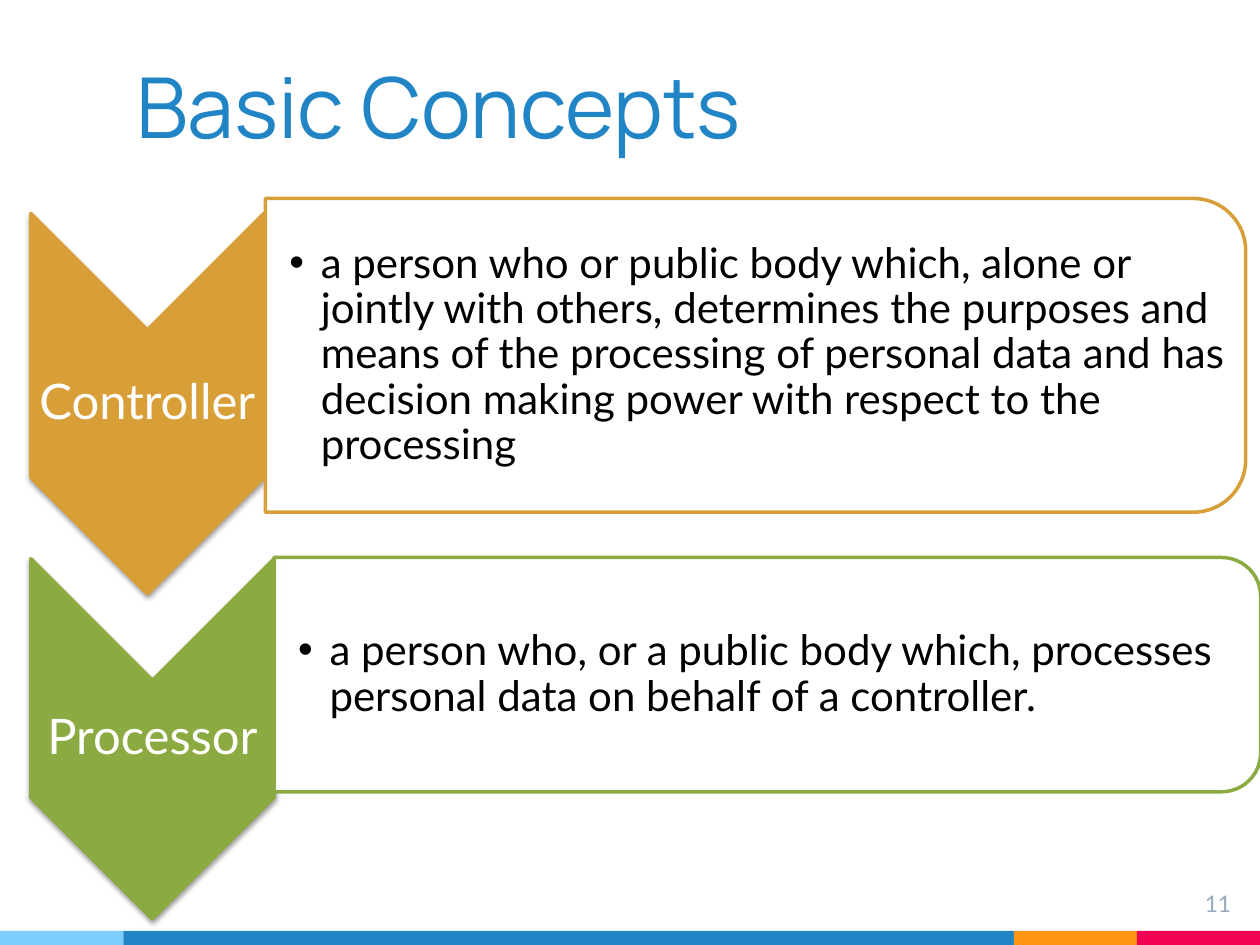
from lxml import etree
from pptx import Presentation
from pptx.dml.color import RGBColor
from pptx.enum.shapes import MSO_SHAPE
from pptx.enum.text import MSO_ANCHOR, MSO_AUTO_SIZE, PP_ALIGN
from pptx.oxml.ns import qn
from pptx.util import Pt

RECT, CHEVRON = MSO_SHAPE.RECTANGLE, MSO_SHAPE.CHEVRON
PANEL = MSO_SHAPE.ROUND_2_SAME_RECTANGLE
MIDDLE, BOTTOM, TOP = MSO_ANCHOR.MIDDLE, MSO_ANCHOR.BOTTOM, MSO_ANCHOR.TOP
LEFT, CENTER, RIGHT = PP_ALIGN.LEFT, PP_ALIGN.CENTER, PP_ALIGN.RIGHT
NO_FIT = MSO_AUTO_SIZE.NONE
CORNER_INSET = 0.16667 * 0.2929

FOOTER_BANDS = [
    (0, 70.5, "7ECEFD"),
    (70.5, 508.9, "2185C5"),
    (579.4, 70.3, "FF9715"),
    (649.7, 70.3, "F20253"),
]
CONCEPTS = [
    ("Controller",
     "a person who or public body which, alone or jointly with others, "
     "determines the purposes and means of the processing of personal data "
     "and has decision making power with respect to the processing",
     "D89F39", (17.6, 122, 133.2, 217.4), (151.6, 113.4, 560.2, 179.3)),
    ("Processor",
     "a person who, or a public body which, processes personal data on "
     "behalf of a controller.",
     "8BAB42", (17.6, 319.3, 139, 205.9), (156.6, 318.6, 563.8, 133.9)),
]


def rgb(hex_code):
    """Turn a hex string into a colour."""
    return RGBColor.from_string(hex_code)


def add_child(parent, tag, **attributes):
    """Append a DrawingML element with the given attributes."""
    child = etree.SubElement(parent, qn(tag))
    for name, value in attributes.items():
        child.set(name, value)
    return child


def place(shape, left, top, width, height):
    """Set the position and size of a shape in points."""
    shape.left, shape.top = Pt(left), Pt(top)
    shape.width, shape.height = Pt(width), Pt(height)


def write(shape, text, size, colour, anchor, align=LEFT, font="Lato",
          insets=(7.2, 7.2, 7.2, 7.2), spacing=1.0):
    """Write one formatted paragraph and return it."""
    frame = shape.text_frame
    frame.word_wrap, frame.auto_size = True, NO_FIT
    frame.vertical_anchor = anchor
    (frame.margin_left, frame.margin_top,
     frame.margin_right, frame.margin_bottom) = map(Pt, insets)
    paragraph = frame.paragraphs[0]
    paragraph.alignment, paragraph.line_spacing = align, spacing
    paragraph.space_before = Pt(0)
    run = paragraph.add_run()
    run.text = text
    run.font.size, run.font.name = Pt(size), font
    run.font.color.rgb = rgb(colour)
    return paragraph


def add_bullet(paragraph, colour):
    """Give a paragraph a round bullet and a hanging indent."""
    properties = paragraph._p.get_or_add_pPr()
    properties.set("marL", str(Pt(18)))
    properties.set("indent", str(-Pt(18)))
    add_child(add_child(properties, "a:buClr"), "a:srgbClr", val=colour)
    add_child(properties, "a:buFont", typeface="Arial")
    add_child(properties, "a:buChar", char="•")


def add_band(slide, left, width, colour):
    """Add one coloured band along the bottom edge."""
    band = slide.shapes.add_shape(RECT, Pt(left), Pt(532), Pt(width), Pt(8))
    band.shadow.inherit = False
    band.fill.solid()
    band.fill.fore_color.rgb = rgb(colour)
    band.line.fill.background()


def add_turned_shape(slide, kind, box, fill, outline):
    """Add a shape turned a quarter clockwise that covers the given box."""
    left, top, width, height = box
    shift = (width - height) / 2
    shape = slide.shapes.add_shape(
        kind, Pt(left + shift), Pt(top - shift), Pt(height), Pt(width))
    shape.rotation = 90
    shape.shadow.inherit = False
    shape.fill.solid()
    shape.fill.fore_color.rgb = rgb(fill)
    shape.line.color.rgb = rgb(outline)
    shape.line.width = Pt(2)
    return shape


def add_soft_shadow(shape):
    """Cast a soft shadow straight down."""
    effects = shape.element.spPr.find(qn("a:effectLst"))
    shadow = add_child(effects, "a:outerShdw", blurRad=str(Pt(3.1)),
                       dist=str(Pt(1.6)), dir="5400000", rotWithShape="0")
    black = add_child(shadow, "a:srgbClr", val="000000")
    add_child(black, "a:alpha", val="38000")


def add_arrow(slide, label, colour, box):
    """Add a downward chevron with its label between the notches."""
    add_soft_shadow(add_turned_shape(slide, CHEVRON, box, colour, colour))
    left, top, width, height = box
    caption = slide.shapes.add_textbox(
        Pt(left), Pt(top + width / 2), Pt(width), Pt(height - width))
    write(caption, label, 28, "FFFFFF", MIDDLE, CENTER,
          insets=(1.4, 1.4, 1.4, 1.4), spacing=0.9)


def add_definition(slide, body, text, colour, box):
    """Add an outlined panel and lay the body placeholder over it."""
    panel = add_turned_shape(slide, PANEL, box, "FFFFFF", colour)
    white = panel.element.spPr.find(qn("a:solidFill"))[0]
    add_child(white, "a:alpha", val="90000")
    left, top, width, height = box
    inset = height * CORNER_INSET
    place(body, left, top + inset, width - inset, height - 2 * inset)
    paragraph = write(body, text, 24, "000000", MIDDLE,
                      insets=(13.7, 1.4, 1.4, 1.4), spacing=0.9)
    add_bullet(paragraph, "000000")
    panel.element.addnext(body.element)


def main():
    """Build the slide and save it."""
    deck = Presentation()
    deck.slide_width, deck.slide_height = Pt(720), Pt(540)
    slide = deck.slides.add_slide(deck.slide_layouts[3])
    title, *bodies = slide.placeholders

    for left, width, colour in FOOTER_BANDS:
        add_band(slide, left, width, colour)

    place(title, 70.6, 10.8, 597.6, 85)
    write(title, "Basic Concepts", 48, "2185C5", BOTTOM, font="Manrope")

    page_number = slide.shapes.add_textbox(Pt(667.4), Pt(501), Pt(43.2), Pt(33))
    write(page_number, "11", 13, "97ABBC", TOP, RIGHT)

    for body, (label, text, colour, arrow, panel) in zip(bodies, CONCEPTS):
        add_arrow(slide, label, colour, arrow)
        add_definition(slide, body, text, colour, panel)

    deck.save("out.pptx")


if __name__ == "__main__":
    main()
